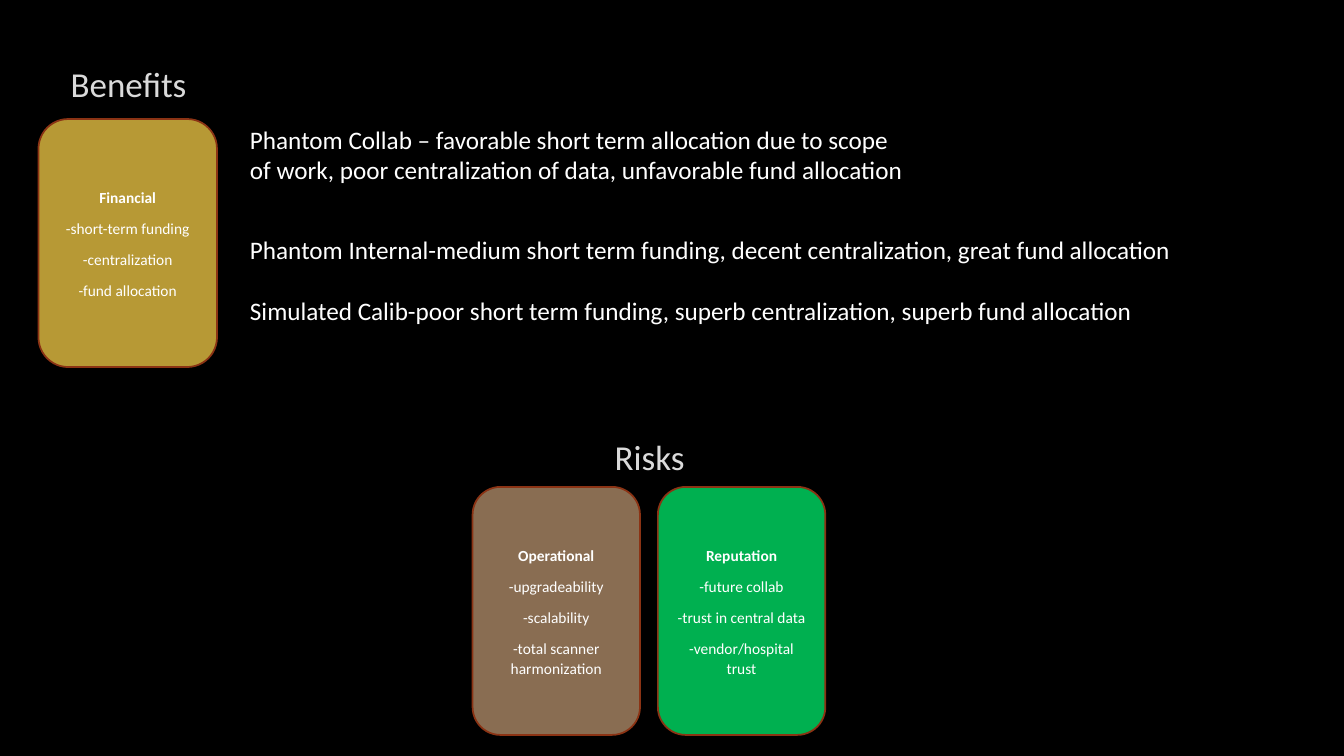
"""Build a slide that sets the benefits of three options against their risks."""
import dataclasses

import lxml.etree
import pptx
import pptx.dml.color
import pptx.enum.shapes
import pptx.enum.text
import pptx.oxml.ns
import pptx.util

Cm = pptx.util.Cm
Pt = pptx.util.Pt
ALIGN = pptx.enum.text.PP_ALIGN
ANCHOR = pptx.enum.text.MSO_ANCHOR

CARD_TOP_BENEFITS = 3.0
CARD_TOP_RISKS = 12.27
CARD_HEIGHT = 6.25
RISK_LEFT = 11.91
RISK_WIDTH = 4.22
RISK_PITCH = 4.67
OPTION_LEFT = 6.05


@dataclasses.dataclass(frozen=True)
class Heading:
    text: str
    left: float
    top: float


@dataclasses.dataclass(frozen=True)
class Card:
    topic: str
    points: tuple[str, ...]
    left: float
    top: float
    width: float
    fill: str


@dataclasses.dataclass(frozen=True)
class Option:
    text: str
    top: float
    width: float
    height: float = 1.02
    wrap: bool = False


HEADINGS = (Heading("Benefits", -0.15, 0.91), Heading("Risks", 12.98, 10.31))

CARDS = (
    Card("Financial", ("-short-term funding", "-centralization", "-fund allocation"),
         0.97, CARD_TOP_BENEFITS, 4.5, "B79935"),
    Card("Operational", ("-upgradeability", "-scalability", "-total scanner harmonization"),
         RISK_LEFT, CARD_TOP_RISKS, RISK_WIDTH, "896D52"),
    Card("Reputation", ("-future collab", "-trust in central data", "-vendor/hospital trust"),
         RISK_LEFT + RISK_PITCH, CARD_TOP_RISKS, RISK_WIDTH, "00B050"),
)

OPTIONS = (
    Option("Phantom Collab – favorable short term allocation due to scope of work, "
           "poor centralization of data, unfavorable fund allocation",
           CARD_TOP_BENEFITS, 17.12, 2.57, True),
    Option("Phantom Internal-medium short term funding, decent centralization, "
           "great fund allocation", 5.77, 24.94),
    Option("Simulated Calib-poor short term funding, superb centralization, "
           "superb fund allocation", 7.32, 23.9),
)


def color(value: str) -> pptx.dml.color.RGBColor:
    return pptx.dml.color.RGBColor.from_string(value)


def write(paragraph, text: str, *, size: float, ink: str = "FFFFFF", bold: bool = False,
          align=ALIGN.LEFT, line_spacing: float | None = None, space_after: float = 0):
    paragraph.alignment = align
    paragraph.line_spacing = line_spacing
    paragraph.space_after = Pt(space_after)
    run = paragraph.add_run()
    run.text = text
    run.font.name = "Calibri"
    run.font.size = Pt(size)
    run.font.bold = bold
    run.font.color.rgb = color(ink)
    return run


def outline_text(run, ink: str, width: float, opacity: int) -> None:
    qn = pptx.oxml.ns.qn
    outline = lxml.etree.Element(qn("a:ln"), w=str(Pt(width)))
    fill = lxml.etree.SubElement(outline, qn("a:solidFill"))
    tint = lxml.etree.SubElement(fill, qn("a:srgbClr"), val=ink)
    lxml.etree.SubElement(tint, qn("a:alpha"), val=str(opacity * 1000))
    run.font._element.insert(0, outline)


def draw_heading(slide, heading: Heading) -> None:
    box = slide.shapes.add_textbox(Cm(heading.left), Cm(heading.top), Cm(6.78), Cm(2.41))
    frame = box.text_frame
    frame.word_wrap = True
    frame.vertical_anchor = ANCHOR.MIDDLE
    run = write(frame.paragraphs[0], heading.text, size=25, ink="DADADA", align=ALIGN.CENTER)
    outline_text(run, "404040", 0.75, 10)


def draw_card(slide, card: Card) -> None:
    panel = slide.shapes.add_shape(
        pptx.enum.shapes.MSO_SHAPE.ROUNDED_RECTANGLE,
        Cm(card.left), Cm(card.top), Cm(card.width), Cm(CARD_HEIGHT))
    panel.shadow.inherit = False
    panel.fill.solid()
    panel.fill.fore_color.rgb = color(card.fill)
    panel.line.color.rgb = color("8B3314")
    panel.line.width = Pt(1.25)
    frame = panel.text_frame
    frame.word_wrap = True
    frame.vertical_anchor = ANCHOR.MIDDLE
    for index, text in enumerate((card.topic, *card.points)):
        paragraph = frame.add_paragraph() if index else frame.paragraphs[0]
        write(paragraph, text, size=11, bold=index == 0, align=ALIGN.CENTER,
              line_spacing=1.07, space_after=8)


def draw_option(slide, option: Option) -> None:
    box = slide.shapes.add_textbox(
        Cm(OPTION_LEFT), Cm(option.top), Cm(option.width), Cm(option.height))
    frame = box.text_frame
    frame.word_wrap = option.wrap
    frame.auto_size = pptx.enum.text.MSO_AUTO_SIZE.SHAPE_TO_FIT_TEXT
    write(frame.paragraphs[0], option.text, size=18)


def main() -> None:
    deck = pptx.Presentation()
    deck.slide_width = Cm(33.87)
    deck.slide_height = Cm(19.05)
    slide = deck.slides.add_slide(deck.slide_layouts[6])
    slide.background.fill.solid()
    slide.background.fill.fore_color.rgb = color("000000")
    for heading in HEADINGS:
        draw_heading(slide, heading)
    for card in CARDS:
        draw_card(slide, card)
    for option in OPTIONS:
        draw_option(slide, option)
    deck.save("out.pptx")


if __name__ == "__main__":
    main()
